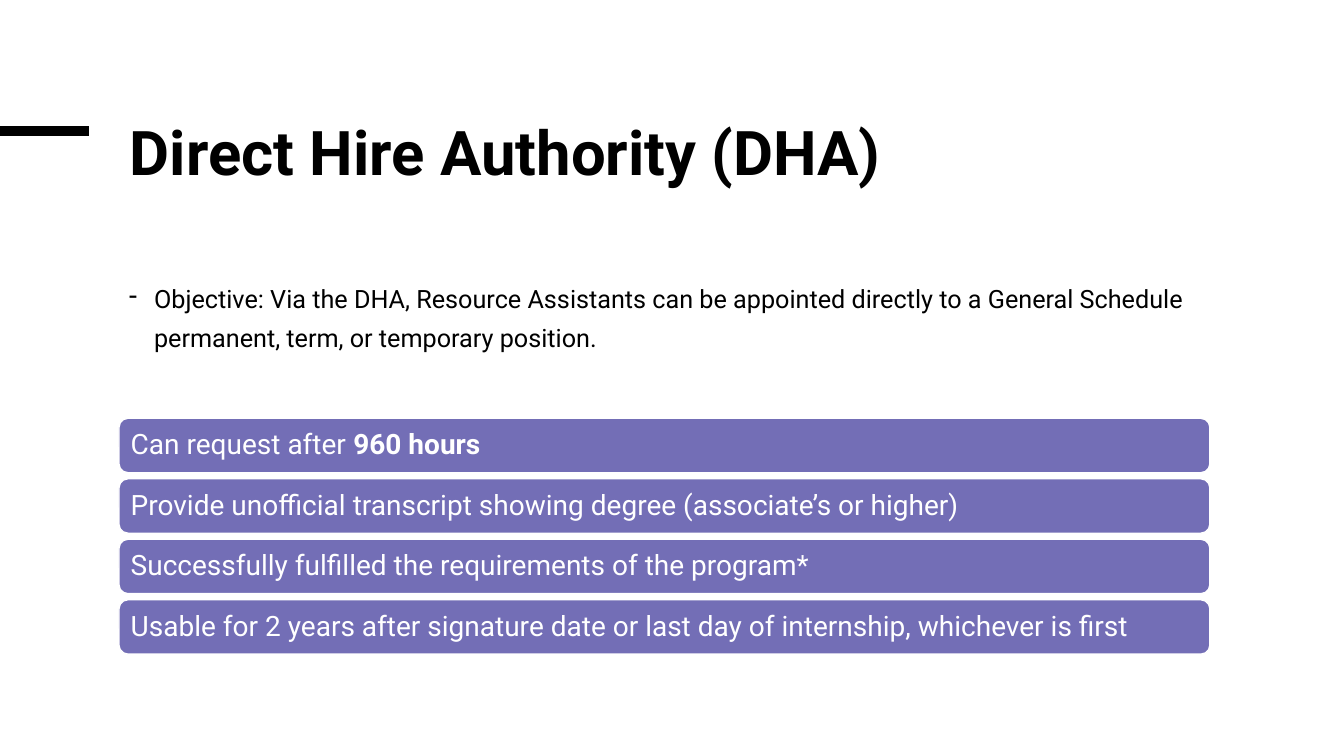
from dataclasses import dataclass

from lxml.etree import SubElement
from pptx import Presentation
from pptx.dml.color import RGBColor
from pptx.enum.shapes import MSO_CONNECTOR, MSO_SHAPE
from pptx.enum.text import MSO_ANCHOR, PP_ALIGN
from pptx.oxml.ns import qn
from pptx.slide import Slide
from pptx.text.text import TextFrame, _Paragraph
from pptx.util import Pt

EMU_PER_PX = 9144  # 100 px to the inch
COLORS = {"ink": "000000", "bar": "736EB6", "paper": "FFFFFF"}
FONT = "Roboto"


@dataclass(frozen=True)
class Box:
    left: int
    top: int
    width: int
    height: int

    def emu(self) -> list[int]:
        return [px(v) for v in (self.left, self.top, self.width, self.height)]


@dataclass(frozen=True)
class Style:
    size: int
    color: str
    line_spacing: float
    bold: bool = False


@dataclass(frozen=True)
class Requirement:
    text: str
    emphasis: str = ""


TITLE = Style(44, "ink", 0.85, bold=True)
OBJECTIVE = Style(18, "ink", 1.3)
BAR = Style(20, "paper", 0.9)

FIRST_BAR = Box(118, 415, 1082, 54)
BAR_PITCH = 60
REQUIREMENTS = [
    Requirement("Can request after ", "960 hours"),
    Requirement("Provide unofficial transcript showing degree (associate’s or higher)"),
    Requirement("Successfully fulfilled the requirements of the program*"),
    Requirement("Usable for 2 years after signature date or last day of internship, whichever is first"),
]


def px(length: int) -> int:
    return length * EMU_PER_PX


def rgb(name: str) -> RGBColor:
    return RGBColor.from_string(COLORS[name])


def set_attributes(target: object, values: dict) -> None:
    for name, value in values.items():
        setattr(target, name, value)


def write(frame: TextFrame, style: Style, text: str, emphasis: str = "") -> _Paragraph:
    frame.word_wrap = True
    paragraph = frame.paragraphs[0]
    set_attributes(paragraph, {"alignment": PP_ALIGN.LEFT, "line_spacing": style.line_spacing})
    for words, bold in ((text, style.bold), (emphasis, True)):
        if words:
            run = paragraph.add_run()
            run.text = words
            set_attributes(run.font, {"name": FONT, "size": Pt(style.size), "bold": bold})
            run.font.color.rgb = rgb(style.color)
    return paragraph


def add_accent(slide: Slide) -> None:
    accent = slide.shapes.add_connector(MSO_CONNECTOR.STRAIGHT, 0, px(130), px(88), px(130))
    accent.line.color.rgb = rgb("ink")
    accent.line.width = Pt(6.75)
    SubElement(accent._element.spPr, qn("a:effectLst"))


def add_text(slide: Slide, box: Box, style: Style, text: str) -> _Paragraph:
    return write(slide.shapes.add_textbox(*box.emu()).text_frame, style, text)


def add_dash(paragraph: _Paragraph) -> None:
    properties = paragraph._p.get_or_add_pPr()
    properties.set("marL", str(px(25)))
    properties.set("indent", str(px(-25)))
    SubElement(properties, qn("a:buChar")).set("char", "-")


def add_bar(slide: Slide, box: Box, requirement: Requirement) -> None:
    bar = slide.shapes.add_shape(MSO_SHAPE.ROUNDED_RECTANGLE, *box.emu())
    bar.shadow.inherit = False
    bar.fill.solid()
    bar.fill.fore_color.rgb = rgb("bar")
    bar.line.color.rgb = rgb("paper")
    bar.line.width = Pt(1)
    set_attributes(bar.text_frame, {
        "vertical_anchor": MSO_ANCHOR.MIDDLE,
        "margin_left": px(9), "margin_right": px(9),
        "margin_top": px(8), "margin_bottom": px(8),
    })
    write(bar.text_frame, BAR, requirement.text, requirement.emphasis)


def main() -> None:
    deck = Presentation()
    set_attributes(deck, {"slide_width": px(1333), "slide_height": px(750)})
    slide = deck.slides.add_slide(deck.slide_layouts[6])

    # Heading
    add_accent(slide)
    add_text(slide, Box(119, 119, 1082, 142), TITLE, "Direct Hire Authority (DHA)")

    # Objective
    objective = add_text(
        slide, Box(118, 267, 1082, 108), OBJECTIVE,
        "Objective: Via the DHA, Resource Assistants can be appointed directly "
        "to a General Schedule permanent, term, or temporary position.")
    objective.space_before = Pt(10)
    add_dash(objective)

    # Requirement bars
    for row, requirement in enumerate(REQUIREMENTS):
        top = FIRST_BAR.top + row * BAR_PITCH
        add_bar(slide, Box(FIRST_BAR.left, top, FIRST_BAR.width, FIRST_BAR.height), requirement)

    deck.save("out.pptx")


if __name__ == "__main__":
    main()
